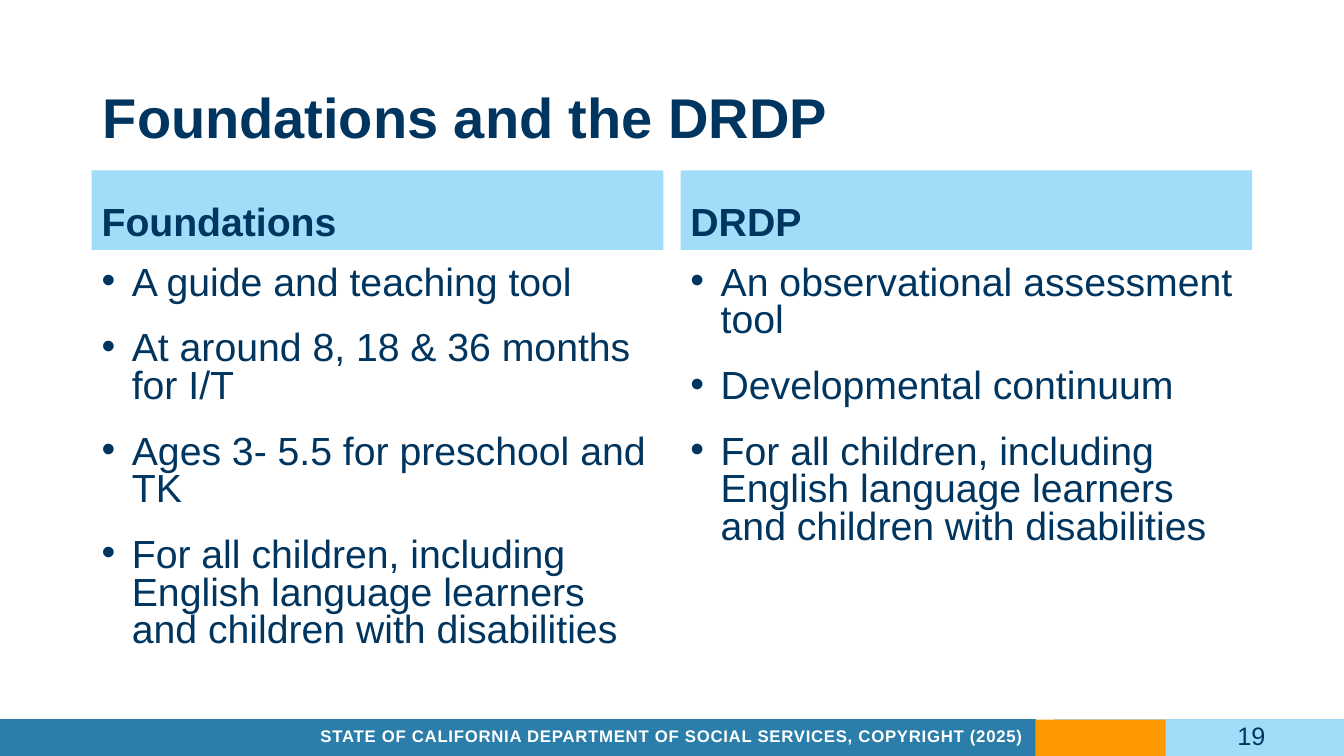
from dataclasses import dataclass

from lxml import etree
from pptx import Presentation
from pptx import util as u
from pptx.dml.color import RGBColor
from pptx.enum import shapes, text
from pptx.oxml.ns import qn

PX = 9144  # EMU per px, 100 px to the inch


@dataclass(frozen=True)
class Theme:
    font: str = "Arial"
    navy: str = "00355F"
    blue: str = "2A7EA9"
    sky: str = "A1DCF8"
    orange: str = "FF9900"
    white: str = "FFFFFF"
    title: int = 40
    body: int = 28
    number: int = 18
    footer: int = 12


THEME = Theme()
ALIGN = text.PP_ALIGN
ANCHOR = text.MSO_ANCHOR

COLUMN_LEFT, COLUMN_STEP, COLUMN_WIDTH = 91, 584, 567
HEADING_TOP, HEADING_HEIGHT = 169, 79
LIST_TOP = 259
BULLET_INDENT = 30
SHARED_POINT = ("For all children, including English language learners "
                "and children with disabilities")
COLUMNS = [
    ("Foundations", 419, [
        "A guide and teaching tool",
        "At around 8, 18 & 36 months for I/T",
        "Ages 3- 5.5 for preschool and TK",
        SHARED_POINT,
    ]),
    ("DRDP", 422, [
        "An observational assessment tool",
        "Developmental continuum",
        SHARED_POINT,
    ]),
]


def apply(target, values):
    for name, value in values.items():
        setattr(target, name, value)


def emu(box):
    return [u.Emu(length * PX) for length in box]


def add_rectangle(slide, box, color, outlined=False, opacity=None):
    shape = slide.shapes.add_shape(shapes.MSO_SHAPE.RECTANGLE, *emu(box))
    shape.shadow.inherit = False
    shape.fill.solid()
    shape.fill.fore_color.rgb = RGBColor.from_string(color)
    if outlined:
        shape.line.color.rgb = RGBColor.from_string(color)
        shape.line.width = u.Pt(1)
    else:
        shape.line.fill.background()
    if opacity is not None:
        fill_color = shape._element.spPr.find(qn("a:solidFill"))[0]
        etree.SubElement(fill_color, qn("a:alpha"), val=str(opacity * 1000))
    return shape


def add_bullet(paragraph):
    properties = paragraph._p.get_or_add_pPr()
    properties.set("marL", str(BULLET_INDENT * PX))
    properties.set("indent", str(-BULLET_INDENT * PX))
    etree.SubElement(properties, qn("a:buFont"), typeface=THEME.font)
    etree.SubElement(properties, qn("a:buChar"), char="•")


def write(shape, lines, size, color=THEME.navy, bold=False, anchor=ANCHOR.TOP,
          align=ALIGN.LEFT, spacing=1.0, before=0, after=0, bullets=False, tracking=0):
    frame = shape.text_frame
    apply(frame, {"word_wrap": True, "auto_size": text.MSO_AUTO_SIZE.NONE,
                  "vertical_anchor": anchor})
    for index, line in enumerate(lines):
        paragraph = frame.add_paragraph() if index else frame.paragraphs[0]
        if bullets:
            add_bullet(paragraph)
        apply(paragraph, {"alignment": align, "line_spacing": spacing,
                          "space_before": u.Pt(before if index else 0),
                          "space_after": u.Pt(after)})
        run = paragraph.add_run()
        run.text = line
        apply(run.font, {"name": THEME.font, "size": u.Pt(size), "bold": bold})
        run.font.color.rgb = RGBColor.from_string(color)
        if tracking:
            run._r.get_or_add_rPr().set("spc", str(tracking))


def add_title(slide, box, title):
    shape = slide.shapes.title
    apply(shape, dict(zip(("left", "top", "width", "height"), emu(box))))
    write(shape, [title], THEME.title, bold=True, anchor=ANCHOR.BOTTOM, spacing=0.85)


def add_column(slide, left, heading, list_height, points):
    band = add_rectangle(slide, (left, HEADING_TOP, COLUMN_WIDTH, HEADING_HEIGHT), THEME.sky)
    write(band, [heading], THEME.body, bold=True, anchor=ANCHOR.BOTTOM,
          spacing=0.9, after=5)
    panel = add_rectangle(slide, (left, LIST_TOP, COLUMN_WIDTH, list_height),
                          THEME.white, opacity=80)
    write(panel, points, THEME.body, spacing=0.8, before=15, after=5, bullets=True)


def add_label(slide, box, label, size, **style):
    shape = slide.shapes.add_textbox(*emu(box))
    write(shape, [label], size, anchor=ANCHOR.MIDDLE, **style)


def main():
    presentation = Presentation()
    apply(presentation, {"slide_width": u.Emu(1333 * PX), "slide_height": u.Emu(750 * PX)})
    slide = presentation.slides.add_slide(presentation.slide_layouts[5])

    # Footer bands
    add_rectangle(slide, (0, 714, 1027, 37), THEME.blue, outlined=True)
    add_rectangle(slide, (1046, 714, 287, 37), THEME.sky, outlined=True)
    add_rectangle(slide, (1027, 714, 129, 38), THEME.orange)

    # Title and the two compared columns
    add_title(slide, (92, 39, 1150, 115), "Foundations and the DRDP")
    for index, column in enumerate(COLUMNS):
        add_column(slide, COLUMN_LEFT + index * COLUMN_STEP, *column)

    # Copyright line and slide number
    add_label(slide, (287, 710, 759, 40),
              "STATE OF CALIFORNIA DEPARTMENT OF SOCIAL SERVICES, COPYRIGHT (2025)",
              THEME.footer, color=THEME.white, bold=True, align=ALIGN.CENTER, tracking=50)
    add_label(slide, (965, 710, 300, 40), "19", THEME.number, align=ALIGN.RIGHT)

    presentation.save("out.pptx")


if __name__ == "__main__":
    main()
